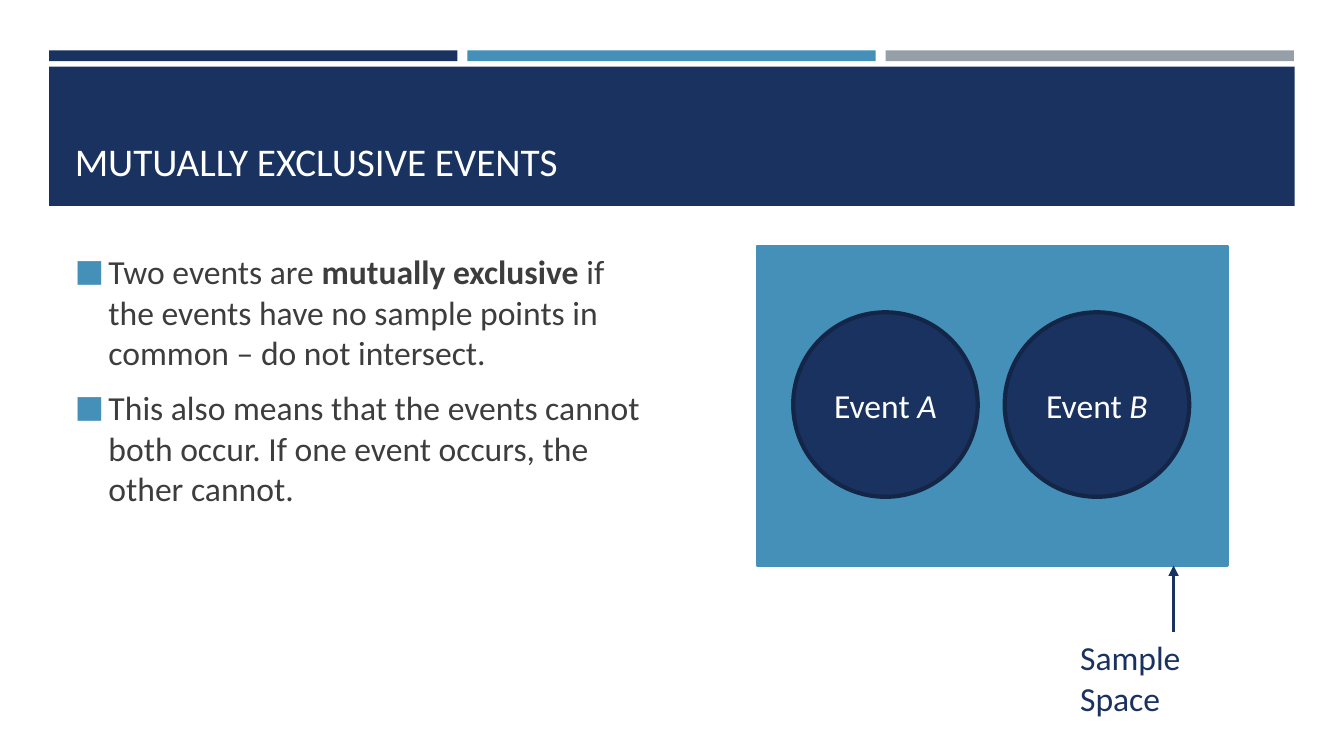
from lxml.etree import SubElement
from pptx import Presentation
from pptx.dml.color import RGBColor
from pptx.enum.shapes import MSO_CONNECTOR, MSO_SHAPE
from pptx.enum.text import MSO_ANCHOR, MSO_AUTO_SIZE, PP_ALIGN
from pptx.oxml.ns import qn
from pptx.util import Cm, Pt

NAVY, BLUE, GREY = "1A3260", "4590B8", "969FA7"
WHITE, TEXT, RIM = "FFFFFF", "3D3D3D", "142648"


def color(hex_code):
    return RGBColor.from_string(hex_code)


def add_run(paragraph, text, size=24, fill=TEXT, bold=False, italic=False, name="Calibri"):
    run = paragraph.add_run()
    run.text = text
    font = run.font
    font.name, font.size, font.bold, font.italic = name, Pt(size), bold, italic
    font.color.rgb = color(fill)


def add_xml(parent, tag, **attributes):
    return SubElement(parent, qn(tag), attributes)


def square_bullet(paragraph):
    props = paragraph._p.get_or_add_pPr()
    props.set("marL", str(Cm(0.85)))
    props.set("indent", str(-Cm(0.85)))
    add_xml(add_xml(props, "a:spcBef"), "a:spcPct", val="20000")
    add_xml(add_xml(props, "a:spcAft"), "a:spcPts", val="600")
    add_xml(add_xml(props, "a:buClr"), "a:srgbClr", val=BLUE)
    add_xml(props, "a:buSzPct", val="92000")
    add_xml(props, "a:buFont", typeface="Calibri")
    add_xml(props, "a:buChar", char="■")


class SlideBuilder:
    def __init__(self, slide):
        self.slide = slide
        self.shapes = slide.shapes

    def shape(self, kind, left, top, width, height, fill, line=None, line_width=1.75):
        item = self.shapes.add_shape(kind, Cm(left), Cm(top), Cm(width), Cm(height))
        item.shadow.inherit = False
        item.fill.solid()
        item.fill.fore_color.rgb = color(fill)
        if line:
            item.line.color.rgb = color(line)
            item.line.width = Pt(line_width)
        else:
            item.line.fill.background()
        return item

    def placeholder(self, index, left, top, width, height, anchor):
        holder = self.slide.placeholders[index]
        holder.left, holder.top = Cm(left), Cm(top)
        holder.width, holder.height = Cm(width), Cm(height)
        self.shapes.element.append(holder.element)  # in front of the band
        frame = holder.text_frame
        frame.auto_size = MSO_AUTO_SIZE.NONE
        frame.vertical_anchor = anchor
        return frame

    def title(self, text, *box):
        paragraph = self.placeholder(0, *box, MSO_ANCHOR.BOTTOM).paragraphs[0]
        paragraph.alignment = PP_ALIGN.LEFT
        add_run(paragraph, text, size=28, fill=WHITE)

    def bullets(self, items, *box):
        frame = self.placeholder(1, *box, MSO_ANCHOR.TOP)
        for number, runs in enumerate(items):
            paragraph = frame.add_paragraph() if number else frame.paragraphs[0]
            square_bullet(paragraph)
            for text, bold in runs:
                add_run(paragraph, text, bold=bold)

    def event(self, letter, left, top, diameter):
        circle = self.shape(MSO_SHAPE.OVAL, left, top, diameter, diameter, NAVY, RIM, 3)
        frame = circle.text_frame
        frame.word_wrap = True
        frame.vertical_anchor = MSO_ANCHOR.MIDDLE
        paragraph = frame.paragraphs[0]
        paragraph.alignment = PP_ALIGN.CENTER
        add_run(paragraph, "Event ", fill=WHITE)
        add_run(paragraph, letter, fill=WHITE, italic=True)

    def label(self, text, left, top, width, height):
        box = self.shapes.add_textbox(Cm(left), Cm(top), Cm(width), Cm(height))
        box.text_frame.word_wrap = True
        add_run(box.text_frame.paragraphs[0], text, fill=NAVY)
        return box

    def arrow_up(self, source, target):
        middle = source.left + source.width // 2
        arrow = self.shapes.add_connector(
            MSO_CONNECTOR.STRAIGHT, middle, source.top, middle, target.top + target.height)
        arrow.begin_connect(source, 0)
        arrow.line.color.rgb = color(NAVY)
        arrow.line.width = Pt(2.5)
        add_xml(arrow.line._get_or_add_ln(), "a:tailEnd", type="triangle")
        add_xml(arrow._element.spPr, "a:effectLst")


def main():
    deck = Presentation()
    deck.slide_width, deck.slide_height = Cm(33.87), Cm(19.05)
    builder = SlideBuilder(deck.slides.add_slide(deck.slide_layouts[1]))

    # Header stripes and title band
    for column, fill in enumerate((NAVY, BLUE, GREY)):
        builder.shape(MSO_SHAPE.RECTANGLE, 1.24 + column * 10.54, 1.27, 10.29, 0.27, fill)
    builder.shape(MSO_SHAPE.RECTANGLE, 1.24, 1.68, 31.39, 3.51, NAVY)
    builder.title("MUTUALLY EXCLUSIVE EVENTS", 1.63, 2.03, 30.63, 2.74)

    # Definition
    builder.bullets([
        [("Two events are ", False), ("mutually exclusive", True),
         (" if the events have no sample points in common – do not intersect.", False)],
        [("This also means that the events cannot both occur. "
          "If one event occurs, the other cannot.", False)],
    ], 1.63, 6.2, 15.06, 10.08)

    # Venn diagram
    sample_space = builder.shape(MSO_SHAPE.RECTANGLE, 19.08, 6.2, 11.86, 8.05, BLUE, BLUE)
    for column, letter in enumerate("AB"):
        builder.event(letter, 19.99 + column * 5.33, 7.87, 4.65)

    # Sample space label
    space_label = builder.label("Sample Space", 26.97, 15.93, 5.21, 1.27)
    builder.arrow_up(space_label, sample_space)

    deck.save("out.pptx")


if __name__ == "__main__":
    main()
